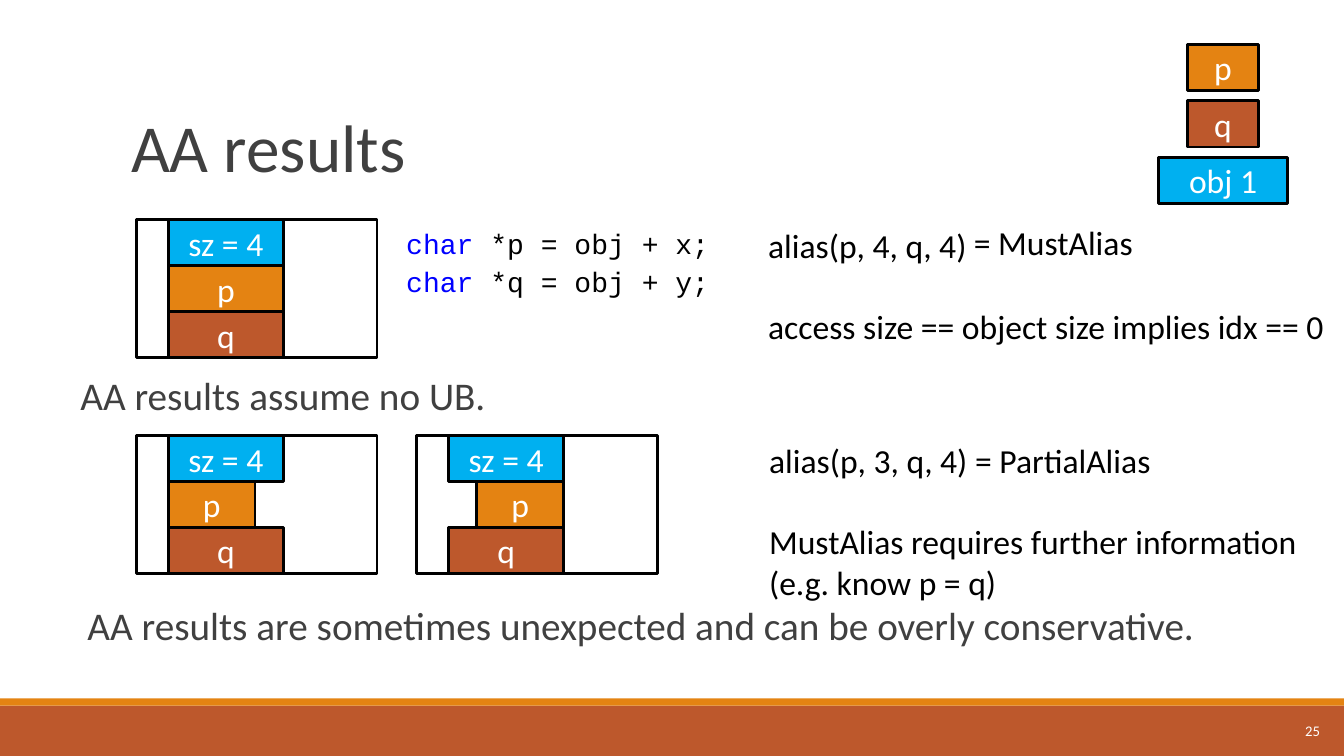
from pptx import Presentation
from pptx.dml.color import RGBColor as RGB
from pptx.enum.shapes import MSO_SHAPE as Shape
from pptx.enum.text import MSO_ANCHOR as Anchor, MSO_AUTO_SIZE as Auto, PP_ALIGN as Align
from pptx.oxml import parse_xml
from pptx.oxml.ns import nsdecls
from pptx.util import Inches, Pt

ORANGE, RUST, BLUE = "E48312", "BD582C", "00B0F0"
BLACK, WHITE, GRAY, KEY = "000000", "FFFFFF", "404040", "0000FF"


def color(code):
    return RGB.from_string(code)


class Deck:
    font = "Calibri"

    def __init__(self):
        self.prs = Presentation()
        self.prs.slide_width = Inches(13.33)
        self.prs.slide_height = Inches(7.5)
        self.slide = self.prs.slides.add_slide(self.prs.slide_layouts[3])

    def style(self, run, size, ink, font=None):
        run.font.size = Pt(size)
        run.font.name = font or self.font
        run.font.color.rgb = color(ink)

    def place(self, shape, x, y, w, h):
        shape.left, shape.top = Inches(x), Inches(y)
        shape.width, shape.height = Inches(w), Inches(h)

    def bullet(self, para):
        props = para._p.get_or_add_pPr()
        props.set("marL", str(Inches(0.09)))
        props.set("indent", str(Inches(-0.08)))
        props.append(parse_xml(
            f'<a:buClr {nsdecls("a")}><a:srgbClr val="{ORANGE}"/></a:buClr>'))
        props.append(parse_xml(f'<a:buChar {nsdecls("a")} char=" "/>'))

    def title(self, text, *box):
        shape = self.slide.shapes.title
        self.place(shape, *box)
        frame = shape.text_frame
        frame.text = text
        frame.auto_size = Auto.NONE
        frame.vertical_anchor = Anchor.BOTTOM
        para = frame.paragraphs[0]
        para.alignment = Align.LEFT
        self.style(para.runs[0], 48, GRAY)

    def claim(self, index, text, *box):
        shape = self.slide.placeholders[index]
        self.place(shape, *box)
        frame = shape.text_frame
        frame.text = text
        frame.auto_size = Auto.NONE
        frame.margin_left = frame.margin_right = 0
        para = frame.paragraphs[0]
        para.line_spacing = 0.9
        para.space_before = Pt(0)
        self.bullet(para)
        self.style(para.runs[0], 28, GRAY)

    def rect(self, home, fill, x, y, w, h, text="", line=True):
        shape = home.add_shape(Shape.RECTANGLE, Inches(x), Inches(y), Inches(w), Inches(h))
        shape.shadow.inherit = False
        shape.fill.solid()
        shape.fill.fore_color.rgb = color(fill)
        if line:
            shape.line.color.rgb = color(BLACK)
            shape.line.width = Pt(2)
        else:
            shape.line.fill.background()
        if text:
            frame = shape.text_frame
            frame.text = text
            frame.vertical_anchor = Anchor.MIDDLE
            para = frame.paragraphs[0]
            para.alignment = Align.CENTER
            self.style(para.runs[0], 24, WHITE)

    def group(self):
        return self.slide.shapes.add_group_shape().shapes

    def stack(self, x, y, shift=0, width=1.14):
        home = self.group()
        tall, bar, left = 1.37, 0.46, x + 0.32
        step = (tall - bar) / 2
        self.rect(home, WHITE, x, y, 2.39, tall)
        self.rect(home, BLUE, left, y, 1.14, bar, "sz = 4")
        self.rect(home, ORANGE, left + shift, y + step, width, bar, "p")
        self.rect(home, RUST, left, y + 2 * step, 1.14, bar, "q")

    def text(self, lines, x, y, w, h, size=24, ink=BLACK, gap=0):
        shape = self.slide.shapes.add_textbox(Inches(x), Inches(y), Inches(w), Inches(h))
        frame = shape.text_frame
        frame.word_wrap = True
        frame.text = "\n".join(lines)
        for para in frame.paragraphs:
            self.style(para.runs[0], size, ink)
        if gap:
            frame.paragraphs[1].space_before = Pt(gap)
        return frame

    def code(self, lines, *box):
        frame = self.text([word for word, rest in lines], *box, size=20, gap=2.7)
        frame.margin_left = frame.margin_right = 0
        for para, (word, rest) in zip(frame.paragraphs, lines):
            para.add_run().text = rest
            for run, ink in zip(para.runs, (KEY, BLACK)):
                self.style(run, 20, ink, "Courier New")
            self.bullet(para)


def main():
    deck = Deck()
    base = deck.slide.shapes
    deck.rect(base, RUST, 0, 7, 13.33, 0.5, line=False)
    deck.rect(base, ORANGE, 0, 6.93, 13.33, 0.07, line=False)

    deck.title("AA results", 1.2, 0.31, 11, 1.59)
    deck.claim(1, "AA results assume no UB.", 0.68, 3.69, 6.07, 0.73)
    deck.claim(2, "AA results are sometimes unexpected and can be overly conservative.",
               0.75, 5.97, 12.04, 0.73)

    deck.stack(1.35, 2.18)
    deck.stack(1.35, 4.32, width=0.86)
    deck.stack(4.13, 4.32, shift=0.28, width=0.86)

    legend = deck.group()
    items = [("p", ORANGE, 0.71), ("q", RUST, 0.71), ("obj 1", BLUE, 1.28)]
    for row, (name, fill, wide) in enumerate(items):
        deck.rect(legend, fill, 12.13 - wide / 2, 0.44 + row * 0.56, wide, 0.46, name)

    deck.code([("char", " *p = obj + x;"), ("char", " *q = obj + y;")],
              3.88, 2.2, 3.48, 0.93)
    deck.text(["alias(p, 4, q, 4)", "access size == object size implies idx == 0"],
              7.52, 2.18, 5.81, 1.3, gap=29)
    must = deck.text(["= MustAlias"], 9.53, 2.07, 2.23, 0.57)
    must.margin_left = must.margin_top = Inches(0.13)
    deck.text(["alias(p, 3, q, 4) = PartialAlias", "MustAlias requires further information",
               "(e.g. know p = q)"], 7.53, 4.32, 5.81, 1.3, gap=29)
    page = deck.text(["25"], 11.76, 7.05, 1.43, 0.4, size=10.5, ink=WHITE)
    page.vertical_anchor = Anchor.MIDDLE
    page.paragraphs[0].alignment = Align.RIGHT

    deck.prs.save("out.pptx")


if __name__ == "__main__":
    main()
